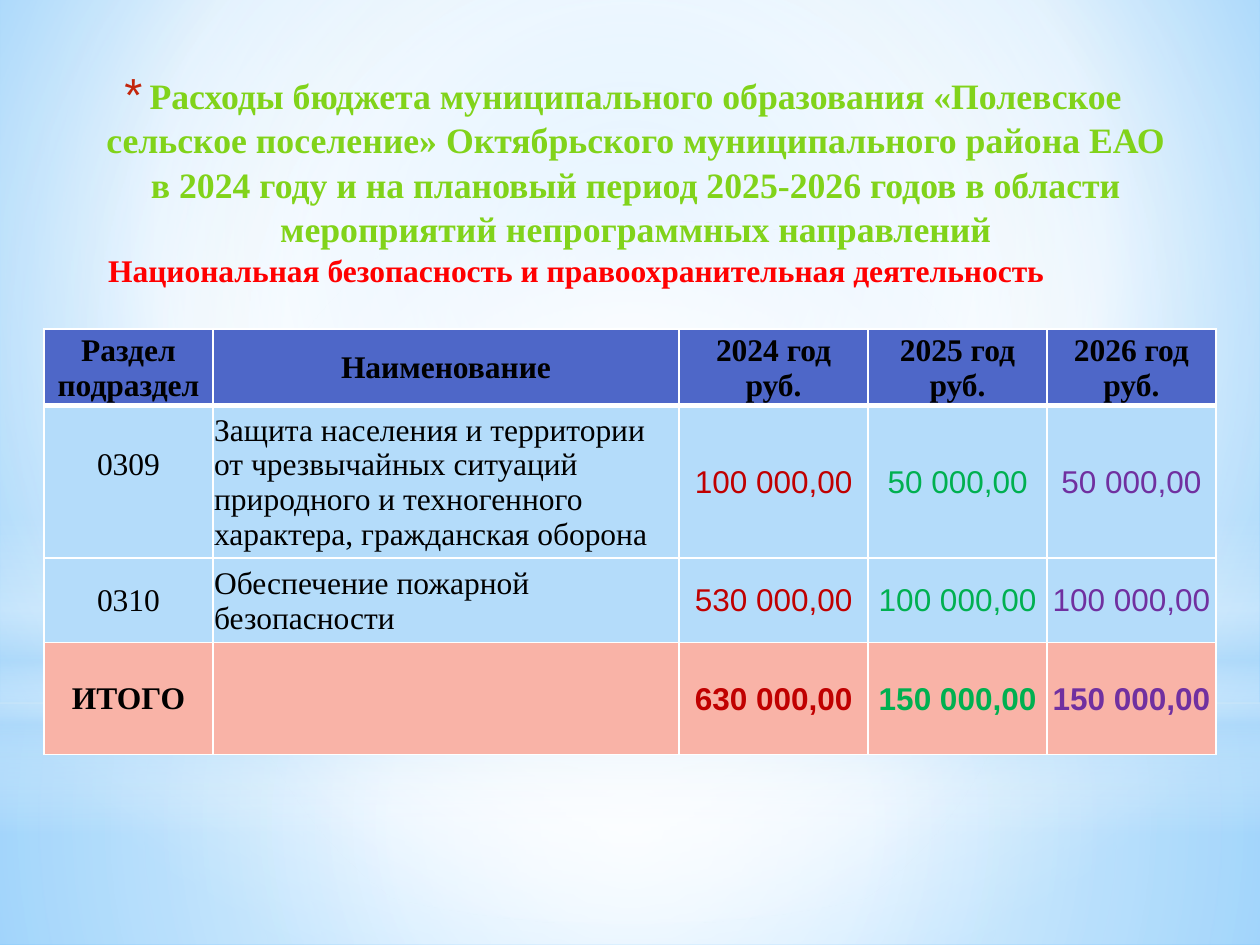
from pptx import Presentation
from pptx.dml.color import RGBColor
from pptx.enum.shapes import MSO_SHAPE
from pptx.enum.text import MSO_ANCHOR, MSO_AUTO_SIZE, PP_ALIGN
from pptx.oxml import parse_xml
from pptx.oxml.ns import nsdecls, qn
from pptx.util import Inches, Pt

SERIF, SANS = "Times New Roman", "Arial"
BLACK, RED, GREEN, PURPLE = "000000", "C00000", "00B050", "7030A0"
HEADER_FILL, ROW_FILL, TOTAL_FILL = "4E67C8", "B4DCFA", "F9B3A7"
WHITE, SKY = "FFFFFF", "B4DCFA"
CENTRE = (50, 50, 50, 50)

TITLE = ("Расходы бюджета муниципального образования «Полевское сельское поселение» "
         "Октябрьского муниципального района ЕАО в 2024 году и на плановый период "
         "2025-2026 годов в области мероприятий непрограммных направлений")
SECTION = "Национальная безопасность и правоохранительная деятельность"

COLUMN_WIDTHS = (1.34, 3.7, 1.5, 1.42, 1.34)
ROW_HEIGHTS = (0.6, 1.18, 0.67, 0.89)
BUDGET = (
    ("Раздел подраздел", "Наименование", "2024 год\vруб.", "2025 год\vруб.", "2026 год\vруб."),
    ("0309", "Защита населения и территории от чрезвычайных ситуаций природного "
     "и техногенного характера, гражданская оборона",
     "100 000,00", "50 000,00", "50 000,00"),
    ("0310", "Обеспечение пожарной безопасности", "530 000,00", "100 000,00", "100 000,00"),
    ("ИТОГО", "", "630 000,00", "150 000,00", "150 000,00"),
)
COLUMN_COLOURS = (BLACK, BLACK, RED, GREEN, PURPLE)

# Gradient stops: position, colour, opacity in percent
BACKGROUND_STOPS = ((0, "9ED5FF", 100), (60, WHITE, 100), (100, "5BB9FF", 100))
GLOWS = (
    (MSO_SHAPE.RECTANGLE, 5.58, 1.92, ((0, WHITE, 91), (37, WHITE, 76), (100, SKY, 79)), CENTRE),
    (MSO_SHAPE.RECTANGLE, 0, 5.58, ((0, WHITE, 89), (48, WHITE, 62), (100, SKY, 79)), CENTRE),
    (MSO_SHAPE.RECTANGLE, 4.12, 2.5, ((0, WHITE, 0), (29, WHITE, 30), (45, SKY, 40),
                                      (55, WHITE, 26), (65, SKY, 60), (100, WHITE, 0)), None),
    (MSO_SHAPE.OVAL, 1.75, 5.58, ((0, WHITE, 100), (56, WHITE, 0)), CENTRE),
)


def rgb(colour):
    return RGBColor.from_string(colour)


def gradient(stops, focus=None):
    """Radial gradient around the focus rectangle, or a vertical one without it."""
    stop_xml = "".join(
        f'<a:gs pos="{position * 1000}"><a:srgbClr val="{colour}">'
        f'<a:alpha val="{opacity * 1000}"/></a:srgbClr></a:gs>'
        for position, colour, opacity in stops)
    if focus:
        sides = " ".join(f'{side}="{value * 1000}"' for side, value in zip("ltrb", focus))
        direction = f'<a:path path="circle"><a:fillToRect {sides}/></a:path>'
    else:
        direction = '<a:lin ang="5400000" scaled="0"/>'
    return parse_xml(f'<a:gradFill {nsdecls("a")} rotWithShape="1">'
                     f'<a:gsLst>{stop_xml}</a:gsLst>{direction}</a:gradFill>')


def format_runs(paragraph, font, size, colour, bold):
    for run in paragraph.runs:
        run.font.name = font
        run.font.size = Pt(size)
        run.font.bold = bold
        run.font.color.rgb = rgb(colour)


def paint_background(slide):
    slide.background.fill.solid()
    plain_fill = next(slide.element.iter(qn("a:solidFill")))
    plain_fill.getparent().replace(plain_fill, gradient(BACKGROUND_STOPS, (20, 10, 20, 60)))


def add_glow(slide, outline, top, height, stops, focus):
    glow = slide.shapes.add_shape(outline, 0, Inches(top), Inches(10), Inches(height))
    glow.shadow.inherit = False
    glow.line.fill.background()
    glow.element.spPr.find(qn("a:prstGeom")).addnext(gradient(stops, focus))


def format_title(slide):
    title = slide.shapes.title
    title.element.getparent().append(title.element)  # in front of the glows
    title.left, title.top = Inches(0.43), Inches(0.52)
    title.width, title.height = Inches(8.98), Inches(1.65)
    frame = title.text_frame
    frame.text = TITLE
    frame.word_wrap = True
    frame.auto_size = MSO_AUTO_SIZE.NONE
    frame.vertical_anchor = MSO_ANCHOR.TOP
    heading = frame.paragraphs[0]
    heading.alignment = PP_ALIGN.CENTER
    heading.line_spacing = 1.04
    heading.space_before, heading.space_after = Pt(0), Pt(3)
    format_runs(heading, SERIF, 20.4, "81D31A", True)
    # Hanging asterisk bullet
    properties = heading._p.get_or_add_pPr()
    properties.set("marL", str(Inches(0.25)))
    properties.set("indent", str(Inches(-0.2)))
    for bullet in ('<a:buClr {}><a:srgbClr val="C3260C"/></a:buClr>',
                   '<a:buSzPct {} val="130000"/>',
                   '<a:buFont {} typeface="Arial"/>',
                   '<a:buChar {} char="*"/>'):
        properties.append(parse_xml(bullet.format(nsdecls("a"))))


def add_section_name(slide):
    box = slide.shapes.add_textbox(Inches(0.67), Inches(1.94), Inches(8.03), Inches(0.4))
    frame = box.text_frame
    frame.word_wrap = True
    frame.text = SECTION
    section = frame.paragraphs[0]
    section._p.get_or_add_pPr().set("marL", str(Inches(0.09)))
    format_runs(section, SERIF, 18, "FF0000", True)


def add_borders(cell, top, bottom):
    properties = cell._tc.get_or_add_tcPr()
    for side, width in (("L", 1), ("R", 1), ("T", top), ("B", bottom)):
        properties.append(parse_xml(
            f'<a:ln{side} {nsdecls("a")} w="{Pt(width)}"><a:solidFill>'
            f'<a:srgbClr val="{WHITE}"/></a:solidFill></a:ln{side}>'))


def fill_cell(cell, text, row, column):
    is_header, is_total = row == 0, row == len(BUDGET) - 1
    add_borders(cell, top=3 if row == 1 else 1, bottom=3 if is_header else 1)
    cell.fill.solid()
    cell.fill.fore_color.rgb = rgb(
        HEADER_FILL if is_header else TOTAL_FILL if is_total else ROW_FILL)
    cell.vertical_anchor = MSO_ANCHOR.MIDDLE
    cell.margin_left = cell.margin_right = cell.margin_top = Inches(0.01)
    cell.margin_bottom = 0
    if not text:
        return
    cell.text_frame.text = text
    entry = cell.text_frame.paragraphs[0]
    is_name = column == 1 and not is_header
    entry.alignment = PP_ALIGN.LEFT if is_name else PP_ALIGN.CENTER
    is_amount = column > 1 and not is_header
    format_runs(entry, SANS if is_amount else SERIF, 18,
                BLACK if is_header else COLUMN_COLOURS[column], is_header or is_total)


def add_budget_table(slide):
    table = slide.shapes.add_table(
        len(BUDGET), len(COLUMN_WIDTHS), Inches(0.35), Inches(2.61),
        Inches(sum(COLUMN_WIDTHS)), Inches(sum(ROW_HEIGHTS))).table
    table.horz_banding = False
    for column, width in zip(table.columns, COLUMN_WIDTHS):
        column.width = Inches(width)
    for row, height in zip(table.rows, ROW_HEIGHTS):
        row.height = Inches(height)
    for row, entries in enumerate(BUDGET):
        for column, text in enumerate(entries):
            fill_cell(table.cell(row, column), text, row, column)
    # The first code sits above the middle of its tall row
    table.cell(1, 0).margin_bottom = Inches(0.28)


def main():
    presentation = Presentation()
    presentation.slide_width, presentation.slide_height = Inches(10), Inches(7.5)
    slide = presentation.slides.add_slide(presentation.slide_layouts[5])
    paint_background(slide)
    for glow in GLOWS:
        add_glow(slide, *glow)
    format_title(slide)
    add_section_name(slide)
    add_budget_table(slide)
    presentation.save("out.pptx")


if __name__ == "__main__":
    main()
